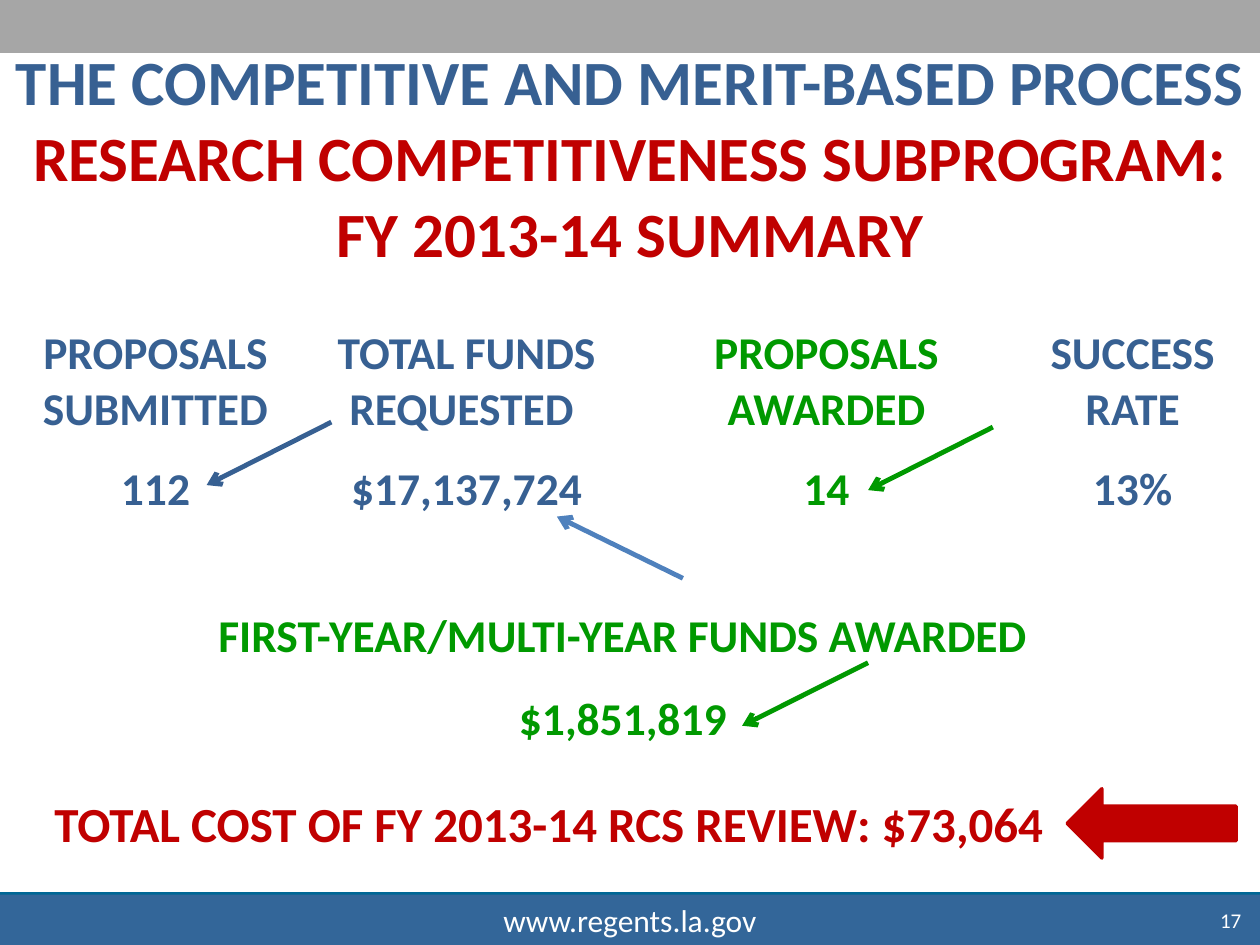
import pptx
import pptx.util
import pptx.dml.color
import pptx.enum.shapes
import pptx.enum.text
import pptx.oxml
import pptx.oxml.ns
from pptx.util import Inches

COLORS = {
    "navy": "376092", "green": "009900", "red": "C00000", "blue": "4F81BD",
    "gray": "A6A6A6", "teal": "006795", "footer": "336699", "white": "FFFFFF",
}
ALIGN = pptx.enum.text.PP_ALIGN
ANCHOR = pptx.enum.text.MSO_ANCHOR
SHAPE = pptx.enum.shapes.MSO_SHAPE


def rgb(color):
    return pptx.dml.color.RGBColor.from_string(COLORS[color])


def write(paragraph, text, size=26, color="navy", bold=True, align=ALIGN.CENTER):
    """Add formatted text to a paragraph; newlines become line breaks."""
    paragraph.alignment = align
    for i, line in enumerate(text.split("\n")):
        if i:
            paragraph.add_line_break()
        run = paragraph.add_run()
        run.text = line
        run.font.name = "Calibri"
        run.font.size = pptx.util.Pt(size)
        run.font.bold = bold
        run.font.color.rgb = rgb(color)


class SlideBuilder:
    def __init__(self, slide):
        self.slide = slide
        self.shapes = slide.shapes
        self.line_width = pptx.util.Pt(2.75)

    def title(self, parts, left, top, width, height):
        title = self.shapes.title
        title.left, title.top = Inches(left), Inches(top)
        title.width, title.height = Inches(width), Inches(height)
        frame = title.text_frame
        frame.word_wrap = True
        frame.auto_size = pptx.enum.text.MSO_AUTO_SIZE.NONE
        frame.vertical_anchor = ANCHOR.MIDDLE
        frame.margin_left = frame.margin_right = 0
        paragraph = frame.paragraphs[0]
        paragraph.space_before = paragraph.space_after = pptx.util.Pt(3)
        for i, (text, color) in enumerate(parts):
            if i:
                paragraph.add_line_break()
            write(paragraph, text, size=36, color=color)

    def shape(self, kind, left, top, width, height, color, outline=None):
        shape = self.shapes.add_shape(
            kind, Inches(left), Inches(top), Inches(width), Inches(height))
        shape.shadow.inherit = False
        shape.fill.solid()
        shape.fill.fore_color.rgb = rgb(color)
        if outline:
            shape.line.color.rgb = rgb(color)
            shape.line.width = pptx.util.Pt(outline)
        else:
            shape.line.fill.background()
        return shape

    def text(self, text, left, top, width, height, anchor=ANCHOR.TOP, **style):
        box = self.shapes.add_textbox(
            Inches(left), Inches(top), Inches(width), Inches(height))
        box.text_frame.word_wrap = True
        box.text_frame.vertical_anchor = anchor
        write(box.text_frame.paragraphs[0], text, **style)

    def table(self, rows, colors, left, top, widths, heights):
        table = self.shapes.add_table(
            len(rows), len(widths), Inches(left), Inches(top),
            Inches(sum(widths)), Inches(sum(heights))).table
        table.first_row = table.horz_banding = False
        for column, width in zip(table.columns, widths):
            column.width = Inches(width)
        for r, (values, height) in enumerate(zip(rows, heights)):
            table.rows[r].height = Inches(height)
            for c, (value, color) in enumerate(zip(values, colors)):
                cell = table.cell(r, c)
                cell.fill.background()
                write(cell.text_frame.paragraphs[0], value, color=color)

    def arrow(self, start, end, color):
        arrow = self.shapes.add_connector(
            pptx.enum.shapes.MSO_CONNECTOR.STRAIGHT,
            *(Inches(value) for value in start + end))
        arrow.line.color.rgb = rgb(color)
        arrow.line.width = self.line_width
        namespace = pptx.oxml.ns.nsdecls("a")
        arrow.line._get_or_add_ln().append(
            pptx.oxml.parse_xml(f'<a:tailEnd {namespace} type="arrow"/>'))
        arrow._element.spPr.append(
            pptx.oxml.parse_xml(f"<a:effectLst {namespace}/>"))


def main():
    deck = pptx.Presentation()
    deck.slide_width, deck.slide_height = Inches(10), Inches(7.5)
    page = SlideBuilder(deck.slides.add_slide(deck.slide_layouts[5]))

    # Header and footer bars
    page.shape(SHAPE.RECTANGLE, 0, 7.08, 10, 0.42, "teal")
    page.shape(SHAPE.RECTANGLE, 0, 0, 10, 0.42, "gray")
    footer = page.shape(SHAPE.RECTANGLE, 0, 7.1, 10, 0.4, "footer")
    write(footer.text_frame.paragraphs[0], "www.regents.la.gov",
          size=18, color="white", bold=False)
    page.text("17", 9.55, 7.1, 0.4, 0.4, anchor=ANCHOR.MIDDLE,
              size=12, color="white", bold=False, align=ALIGN.RIGHT)

    # Title
    page.title([
        ("THE COMPETITIVE AND MERIT-BASED PROCESS", "navy"),
        ("RESEARCH COMPETITIVENESS SUBPROGRAM:\nFY 2013-14 SUMMARY", "red"),
    ], 0, 0.73, 10, 1.02)

    # Proposal figures
    page.table(
        [["PROPOSALS SUBMITTED", "TOTAL FUNDS REQUESTED ",
          "PROPOSALS AWARDED", "SUCCESS RATE"],
         ["112", "$17,137,724", "14", "13%"]],
        ["navy", "navy", "green", "navy"],
        0.08, 2.54, [2.31, 2.63, 3.08, 1.78], [1.08, 0.53])

    # Funds awarded
    page.table([["FIRST-YEAR/MULTI-YEAR FUNDS AWARDED"], ["$1,851,819"]],
               ["green"], 0.41, 4.78, [9.07], [0.66, 0.53])

    # Arrows pointing at the figures
    for start, end, color in [
        ((6.89, 5.26), (5.89, 5.76), "green"),
        ((5.42, 4.59), (4.42, 4.1), "blue"),
        ((7.88, 3.39), (6.89, 3.89), "green"),
        ((2.63, 3.35), (1.64, 3.85), "navy"),
    ]:
        page.arrow(start, end, color)

    # Review cost
    page.text("TOTAL COST OF FY 2013-14 RCS REVIEW: $73,064",
              0.28, 6.25, 8.15, 0.57, size=28, color="red")
    cost_arrow = page.shape(SHAPE.RIGHT_ARROW, 8.47, 6.26, 1.34, 0.55,
                            "red", outline=2)
    cost_arrow.rotation = 180

    deck.save("out.pptx")


if __name__ == "__main__":
    main()
